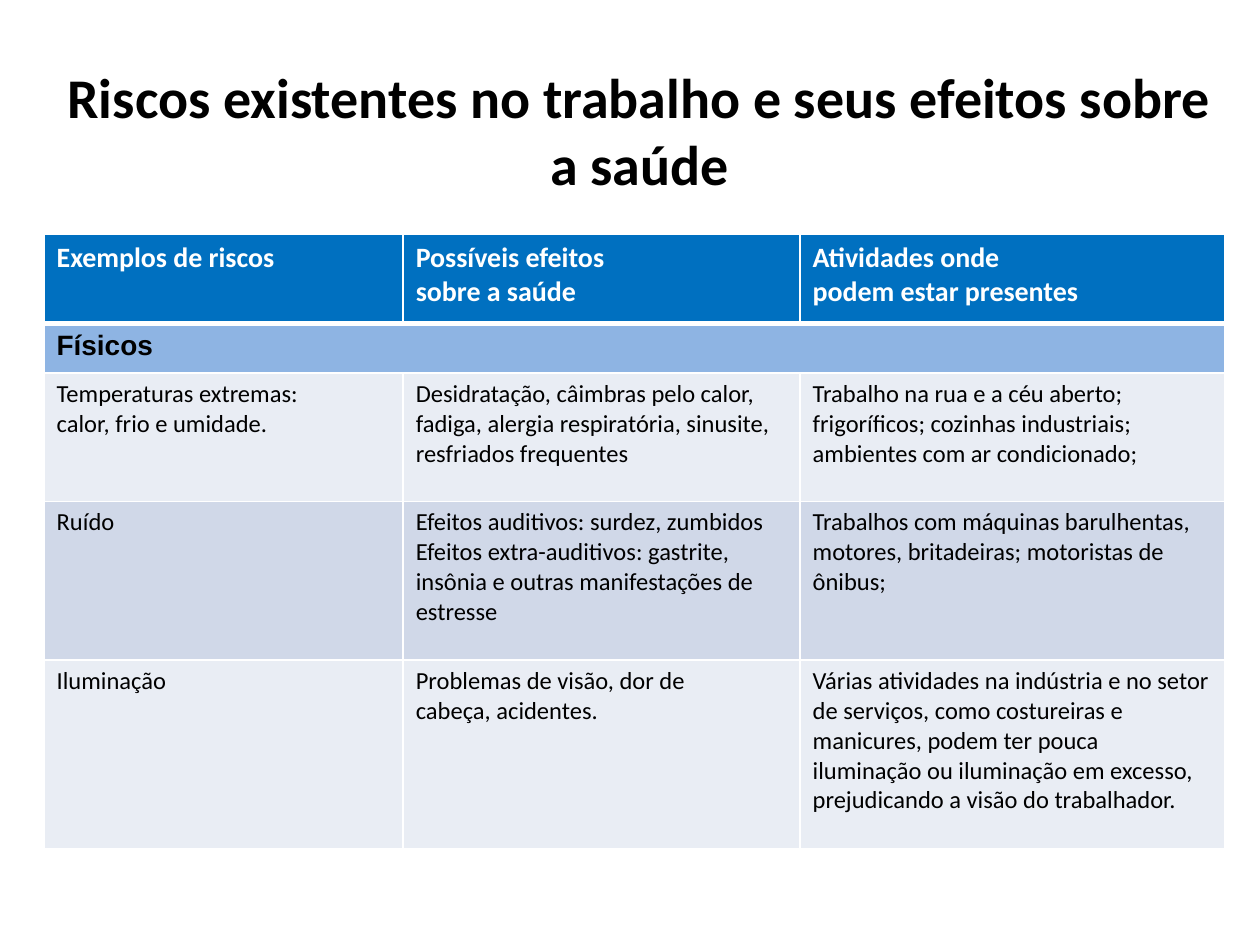
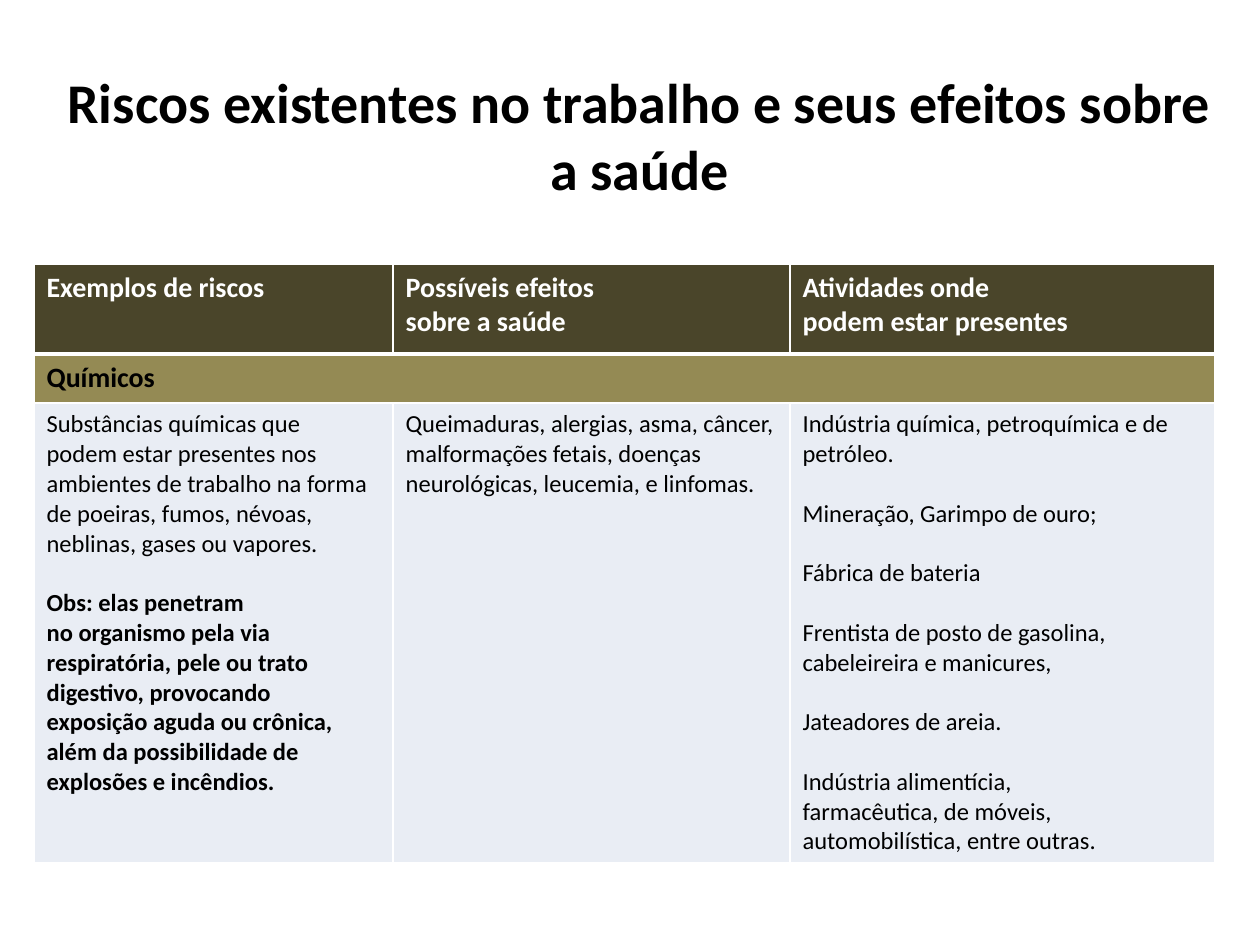
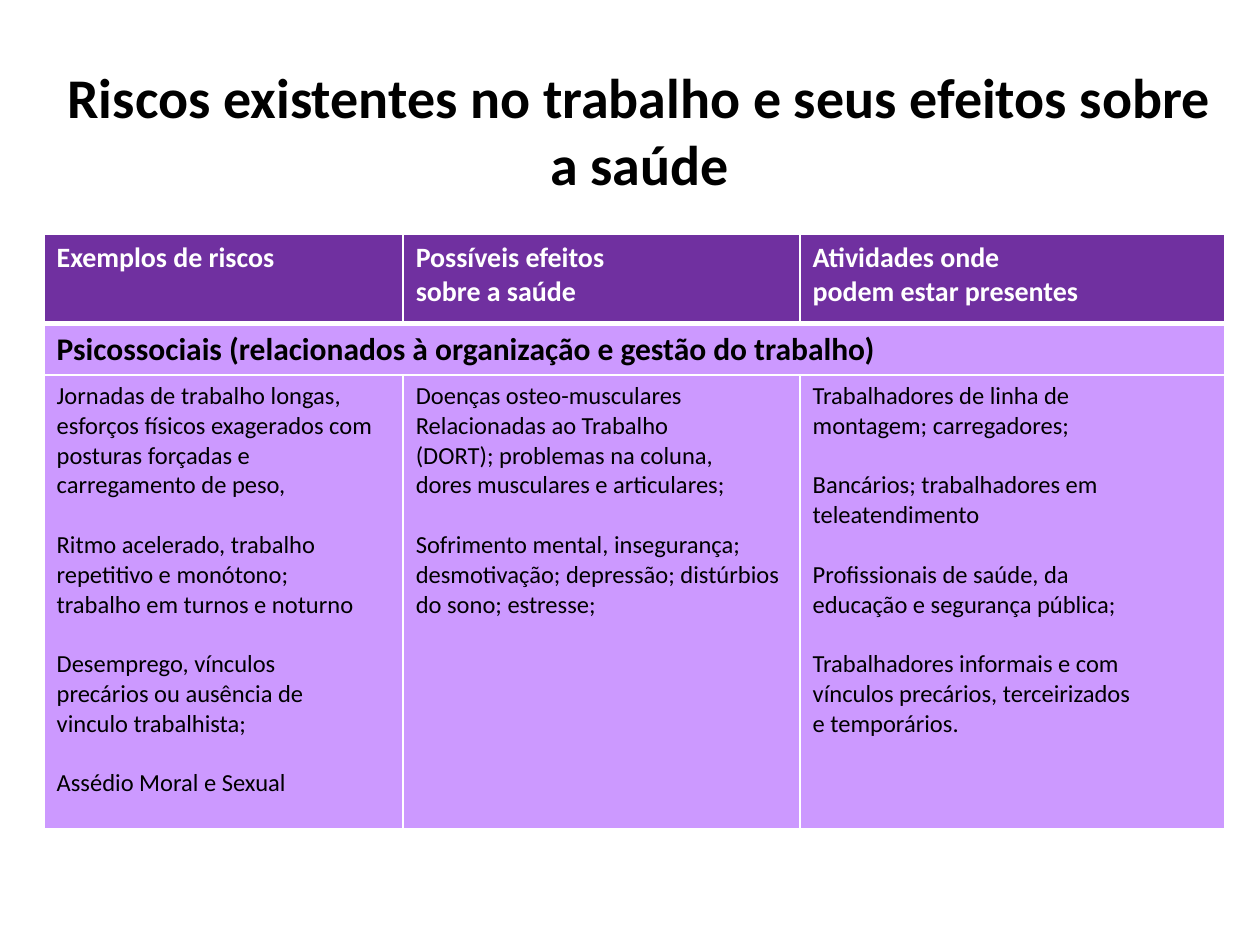
from dataclasses import dataclass
from typing import NamedTuple

from lxml.etree import SubElement
from pptx import Presentation
from pptx.dml.color import RGBColor
from pptx.enum.text import MSO_ANCHOR, MSO_AUTO_SIZE, PP_ALIGN
from pptx.oxml.ns import qn
from pptx.util import Inches, Pt

WHITE = RGBColor(0xFF, 0xFF, 0xFF)
BLACK = RGBColor(0, 0, 0)
BLUE = RGBColor(0x00, 0x70, 0xC0)
LIGHT_BLUE = RGBColor(0x8E, 0xB4, 0xE3)
OLIVE = RGBColor(0x4A, 0x45, 0x2A)
LIGHT_OLIVE = RGBColor(0x94, 0x8A, 0x54)
PURPLE = RGBColor(0x70, 0x30, 0xA0)
LILAC = RGBColor(0xCC, 0x99, 0xFF)
PALE = RGBColor(0xE9, 0xED, 0xF4)
PALE_DARK = RGBColor(0xD0, 0xD8, 0xE8)

FONT = "Calibri"
TITLE = "Riscos existentes no trabalho e seus efeitos sobre a saúde"
HEADINGS = (
    "Exemplos de riscos",
    "Possíveis efeitos\nsobre a saúde",
    "Atividades onde\npodem estar presentes",
)
COLUMN_WIDTHS = (2.85, 3.15, 3.37)
HEADER_HEIGHT = 0.71
PASSAGE_GAP = Pt(17)  # one line of body text


class Style(NamedTuple):
    size: int
    color: RGBColor = BLACK
    bold: bool = False
    font: str = FONT


TITLE_STYLE = Style(32, bold=True)
HEADER_STYLE = Style(16, WHITE, True)
BODY_STYLE = Style(14)
NOTE_STYLE = Style(14, bold=True)


class Passage(NamedTuple):
    """Lines that stand together, set off from the passage before."""
    lines: str
    style: Style = BODY_STYLE


@dataclass(frozen=True)
class Risk:
    height: float
    fill: RGBColor
    cells: tuple[tuple[Passage, ...], ...]


@dataclass(frozen=True)
class RiskGroup:
    name: str
    name_style: Style
    header_fill: RGBColor
    name_fill: RGBColor
    risks: tuple[Risk, ...]
    title_top: float = 0.52
    left: float = 0.35
    top: float = 1.86
    name_height: float = 0.39


def body(*passages: str) -> tuple[Passage, ...]:
    return tuple(Passage(lines) for lines in passages)


GROUPS = (
    RiskGroup(
        "Físicos", Style(16, bold=True, font="Arial"), BLUE, LIGHT_BLUE,
        (
            Risk(1.02, PALE, (
                body("Temperaturas extremas:\ncalor, frio e umidade."),
                body("Desidratação, câimbras pelo calor, fadiga, alergia "
                     "respiratória, sinusite, resfriados frequentes"),
                body("Trabalho na rua e a céu aberto; frigoríficos; cozinhas "
                     "industriais; ambientes com ar condicionado;"),
            )),
            Risk(1.26, PALE_DARK, (
                body("Ruído"),
                body("Efeitos auditivos: surdez, zumbidos\n"
                     "Efeitos extra-auditivos: gastrite, insônia e outras "
                     "manifestações de estresse"),
                body("Trabalhos com máquinas barulhentas, motores, "
                     "britadeiras; motoristas de\nônibus;"),
            )),
            Risk(1.5, PALE, (
                body("Iluminação"),
                body("Problemas de visão, dor de\ncabeça, acidentes."),
                body("Várias atividades na indústria e no setor de serviços, "
                     "como costureiras e manicures, podem ter pouca "
                     "iluminação ou iluminação em excesso,\n"
                     "prejudicando a visão do trabalhador."),
            )),
        ),
    ),
    RiskGroup(
        "Químicos", Style(16, bold=True), OLIVE, LIGHT_OLIVE,
        (
            Risk(3.6, PALE, (
                (
                    Passage("Substâncias químicas que\n"
                            "podem estar presentes nos ambientes de trabalho "
                            "na forma de poeiras, fumos, névoas, neblinas, "
                            "gases ou vapores."),
                    Passage("Obs: elas penetram\nno organismo pela via\n"
                            "respiratória, pele ou trato\n"
                            "digestivo, provocando\n"
                            "exposição aguda ou crônica,\n"
                            "além da possibilidade de\n"
                            "explosões e incêndios.", NOTE_STYLE),
                ),
                body("Queimaduras, alergias, asma, câncer, malformações "
                     "fetais, doenças neurológicas, leucemia, e linfomas."),
                body("Indústria química, petroquímica e de petróleo.",
                     "Mineração, Garimpo de ouro;",
                     "Fábrica de bateria",
                     "Frentista de posto de gasolina,\n"
                     "cabeleireira e manicures,",
                     "Jateadores de areia.",
                     "Indústria alimentícia,\nfarmacêutica, de móveis,\n"
                     "automobilística, entre outras."),
            )),
        ),
        title_top=0.6, left=0.27, top=2.1,
    ),
    RiskGroup(
        "Psicossociais (relacionados à organização e gestão do trabalho)",
        Style(18, bold=True), PURPLE, LILAC,
        (
            Risk(3.6, LILAC, (
                body("Jornadas de trabalho longas, esforços físicos "
                     "exagerados com posturas forçadas e carregamento de peso,",
                     "Ritmo acelerado, trabalho\nrepetitivo e monótono;\n"
                     "trabalho em turnos e noturno",
                     "Desemprego, vínculos\nprecários ou ausência de\n"
                     "vinculo trabalhista;",
                     "Assédio Moral e Sexual"),
                body("Doenças osteo-musculares\nRelacionadas ao Trabalho\n"
                     "(DORT); problemas na coluna,\n"
                     "dores musculares e articulares;",
                     "Sofrimento mental, insegurança; desmotivação; "
                     "depressão; distúrbios do sono; estresse;"),
                body("Trabalhadores de linha de\nmontagem; carregadores;",
                     "Bancários; trabalhadores em\nteleatendimento",
                     "Profissionais de saúde, da\n"
                     "educação e segurança pública;",
                     "Trabalhadores informais e com\n"
                     "vínculos precários, terceirizados\ne temporários."),
            )),
        ),
        name_height=0.4,
    ),
)


def add_run(paragraph, text: str, style: Style) -> None:
    run = paragraph.add_run()
    run.text = text
    run.font.name = style.font
    run.font.size = Pt(style.size)
    run.font.bold = style.bold
    run.font.color.rgb = style.color


def write_passages(frame, passages: tuple[Passage, ...]) -> None:
    paragraph = frame.paragraphs[0]
    for passage_index, passage in enumerate(passages):
        for line_index, line in enumerate(passage.lines.split("\n")):
            if passage_index or line_index:
                paragraph = frame.add_paragraph()
            if passage_index and not line_index:
                paragraph.space_before = PASSAGE_GAP
            add_run(paragraph, line, passage.style)


def set_borders(cell, top: int = 1, bottom: int = 1) -> None:
    """Give the cell white borders, with widths in points."""
    properties = cell._tc.get_or_add_tcPr()
    widths = {"a:lnL": 1, "a:lnR": 1, "a:lnT": top, "a:lnB": bottom}
    for side, width in widths.items():
        line = SubElement(properties, qn(side), w=str(Pt(width)))
        fill = SubElement(line, qn("a:solidFill"))
        SubElement(fill, qn("a:srgbClr"), val=str(WHITE))


def fill_row(row, height: float, color: RGBColor,
             texts: tuple[tuple[Passage, ...], ...],
             top: int = 1, bottom: int = 1) -> None:
    row.height = Inches(height)
    for cell in row.cells:
        set_borders(cell, top, bottom)
        cell.fill.solid()
        cell.fill.fore_color.rgb = color
    for cell, passages in zip(row.cells, texts):
        write_passages(cell.text_frame, passages)


def add_title(slide, top: float) -> None:
    title = slide.shapes.title
    title.left, title.top = Inches(0.35), Inches(top)
    title.width, title.height = Inches(9.45), Inches(1.54 - top)
    frame = title.text_frame
    frame.auto_size = MSO_AUTO_SIZE.NONE
    frame.vertical_anchor = MSO_ANCHOR.MIDDLE
    frame.paragraphs[0].alignment = PP_ALIGN.CENTER
    add_run(frame.paragraphs[0], TITLE, TITLE_STYLE)


def add_risk_table(slide, group: RiskGroup) -> None:
    height = (HEADER_HEIGHT + group.name_height
              + sum(risk.height for risk in group.risks))
    table = slide.shapes.add_table(
        2 + len(group.risks), len(COLUMN_WIDTHS),
        Inches(group.left), Inches(group.top),
        Inches(sum(COLUMN_WIDTHS)), Inches(height)).table
    table.horz_banding = False
    for column, width in zip(table.columns, COLUMN_WIDTHS):
        column.width = Inches(width)

    header, name_row, *risk_rows = table.rows
    headings = tuple((Passage(text, HEADER_STYLE),) for text in HEADINGS)
    fill_row(header, HEADER_HEIGHT, group.header_fill, headings, bottom=3)
    table.cell(1, 0).merge(table.cell(1, len(COLUMN_WIDTHS) - 1))
    fill_row(name_row, group.name_height, group.name_fill,
             ((Passage(group.name, group.name_style),),), top=3)
    for row, risk in zip(risk_rows, group.risks):
        fill_row(row, risk.height, risk.fill, risk.cells)


def main() -> None:
    deck = Presentation()
    deck.slide_width, deck.slide_height = Inches(10), Inches(7.5)
    title_only = deck.slide_layouts.get_by_name("Title Only")
    for group in GROUPS:
        slide = deck.slides.add_slide(title_only)
        add_title(slide, group.title_top)
        add_risk_table(slide, group)
    deck.save("out.pptx")


if __name__ == "__main__":
    main()
